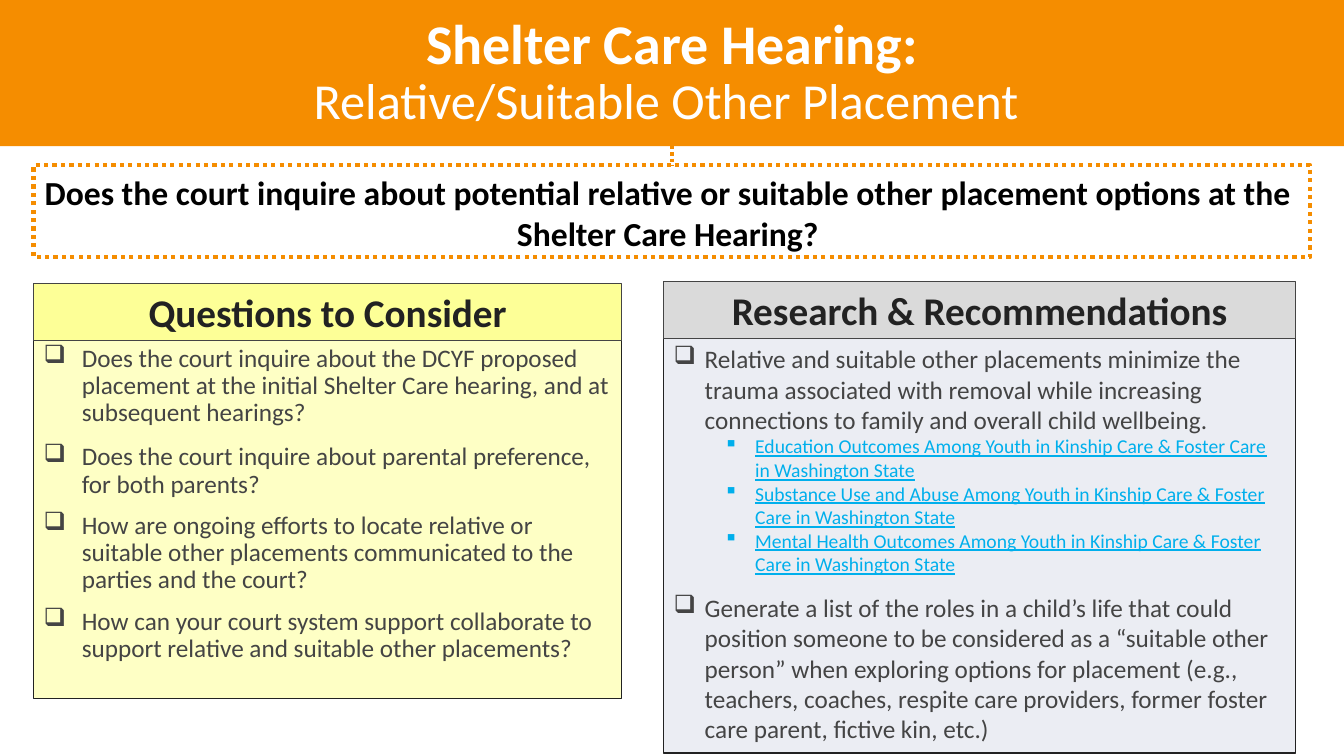
from pptx import Presentation
from pptx import util as u
from pptx.dml.color import RGBColor
from pptx.enum import dml, shapes, text
from pptx.oxml.ns import qn

ORANGE = RGBColor(0xF5, 0x8D, 0x00)
WHITE = RGBColor(0xFF, 0xFF, 0xFF)
BLACK = RGBColor(0x00, 0x00, 0x00)
INK = RGBColor(0x22, 0x22, 0x22)
GREY = RGBColor(0x44, 0x44, 0x44)
LINK = RGBColor(0x00, 0xAF, 0xEC)
YELLOW = RGBColor(0xFD, 0xFF, 0x97)
PALE_YELLOW = RGBColor(0xFE, 0xFF, 0xC5)
SILVER = RGBColor(0xDA, 0xDA, 0xDA)
PALE_BLUE = RGBColor(0xEB, 0xED, 0xF3)

prs = Presentation()
prs.slide_width, prs.slide_height = u.Inches(13.33), u.Inches(7.5)
s = prs.slides.add_slide(prs.slide_layouts[6])

# Grid: 40 columns by 75 rows
COL, ROW = prs.slide_width / 40, prs.slide_height / 75


def box(col, row, cols, rows, fill=None, line=None, width=0.75):
    sp = s.shapes.add_shape(shapes.MSO_SHAPE.RECTANGLE, int(col * COL), int(row * ROW),
                            int(cols * COL), int(rows * ROW))
    sp.shadow.inherit = False
    if fill is None:
        sp.fill.background()
    else:
        sp.fill.solid()
        sp.fill.fore_color.rgb = fill
    if line is None:
        sp.line.fill.background()
    else:
        sp.line.color.rgb = line
        sp.line.width = u.Pt(width)
    sp.text_frame.word_wrap = True
    sp.text_frame.vertical_anchor = text.MSO_ANCHOR.TOP
    return sp


def write(tf, words, size=18, color=GREY, bold=False, underline=False, spacing=None,
          before=0, after=0, bullet=None, indent=0.0, hang=0.0):
    p = tf.paragraphs[0] if not tf.text else tf.add_paragraph()
    p.alignment = text.PP_ALIGN.LEFT if bullet else text.PP_ALIGN.CENTER
    p.line_spacing = spacing
    p.space_before, p.space_after = u.Pt(before), u.Pt(after)
    if bullet:
        pPr = p._p.get_or_add_pPr()
        pPr.set("marL", str(u.Inches(indent)))
        pPr.set("indent", str(-u.Inches(hang)))
        pPr.append(pPr.makeelement(qn("a:buChar"), {"char": bullet}))
    r = p.add_run()
    r.text = words
    r.font.name, r.font.size = "Calibri", u.Pt(size)
    r.font.bold, r.font.underline = bold, underline
    r.font.color.rgb = color


# Title banner
banner = box(0, 0, 40, 14.5, ORANGE)
tf = banner.text_frame
tf.vertical_anchor = text.MSO_ANCHOR.MIDDLE
write(tf, "Shelter Care Hearing:", size=40, color=WHITE, bold=True, spacing=0.9)
write(tf, "Relative/Suitable Other Placement ", size=36, color=WHITE, spacing=0.9)

# Key question in a dotted frame, tied to the banner
frame = box(1, 16.4, 38, 9.1, line=ORANGE, width=3)
frame.line.dash_style = dml.MSO_LINE.ROUND_DOT
tie = s.shapes.add_connector(shapes.MSO_CONNECTOR.STRAIGHT, 0, 0, 0, 0)
tie.begin_connect(banner, 2)
tie.end_connect(frame, 0)
tie.line.color.rgb = ORANGE
tie.line.width = u.Pt(2.25)
tie.line.dash_style = dml.MSO_LINE.ROUND_DOT
spPr = tie._element.spPr
spPr.append(spPr.makeelement(qn("a:effectLst"), {}))

question = s.shapes.add_textbox(int(0.75 * COL), int(16.6 * ROW), int(38.25 * COL), int(9.1 * ROW))
question.text_frame.word_wrap = True
write(question.text_frame, "Does the court inquire about potential relative or suitable other "
      "placement options at the Shelter Care Hearing?", size=24, color=BLACK, bold=True)

# Two panels: heading, column, row, columns, body rows, fills, body line width
HEAD_ROWS = 5.7
panels = [
    ("Questions to Consider", 1, 28.1, 17.5, 35.5, YELLOW, PALE_YELLOW, 0.75),
    ("Research & Recommendations", 19.75, 27.9, 18.8, 41.1, SILVER, PALE_BLUE, 1),
]
bodies = []
for heading, col, row, cols, rows, head_fill, body_fill, width in panels:
    body = box(col, row + HEAD_ROWS, cols, rows, body_fill, INK, width)
    bodies.append(body.text_frame)
    head = box(col, row, cols, HEAD_ROWS, head_fill, GREY)
    write(head.text_frame, heading, size=28, color=INK, bold=True)
questions, research = bodies

# Questions
for before, words in [
    (12, "Does the court inquire about the DCYF proposed placement at the initial "
         "Shelter Care hearing, and at subsequent hearings?"),
    (12, "Does the court inquire about parental preference, for both parents?"),
    (10, "How are ongoing efforts to locate relative or suitable other placements "
         "communicated to the parties and the court?"),
    (10, "How can your court system support collaborate to support relative and "
         "suitable other placements?"),
]:
    write(questions, words, spacing=0.9, before=before, bullet="❑", indent=0.38, hang=0.38)

# Research and recommendations
write(research, "Relative and suitable other placements minimize the trauma associated with "
      "removal while increasing connections to family and overall child wellbeing.",
      bullet="❑", indent=0.31, hang=0.31)
for topic, after in [("Education Outcomes", 0), ("Substance Use and Abuse", 0),
                     ("Mental Health Outcomes", 12)]:
    write(research, topic + " Among Youth in Kinship Care & Foster Care in Washington State",
          size=14, color=LINK, underline=True, after=after, bullet="▪", indent=0.81, hang=0.31)
write(research, "Generate a list of the roles in a child’s life that could position someone to be "
      "considered as a “suitable other person” when exploring options for placement (e.g., "
      "teachers, coaches, respite care providers, former foster care parent, fictive kin, etc.)",
      after=12, bullet="❑", indent=0.31, hang=0.31)

prs.save("out.pptx")
